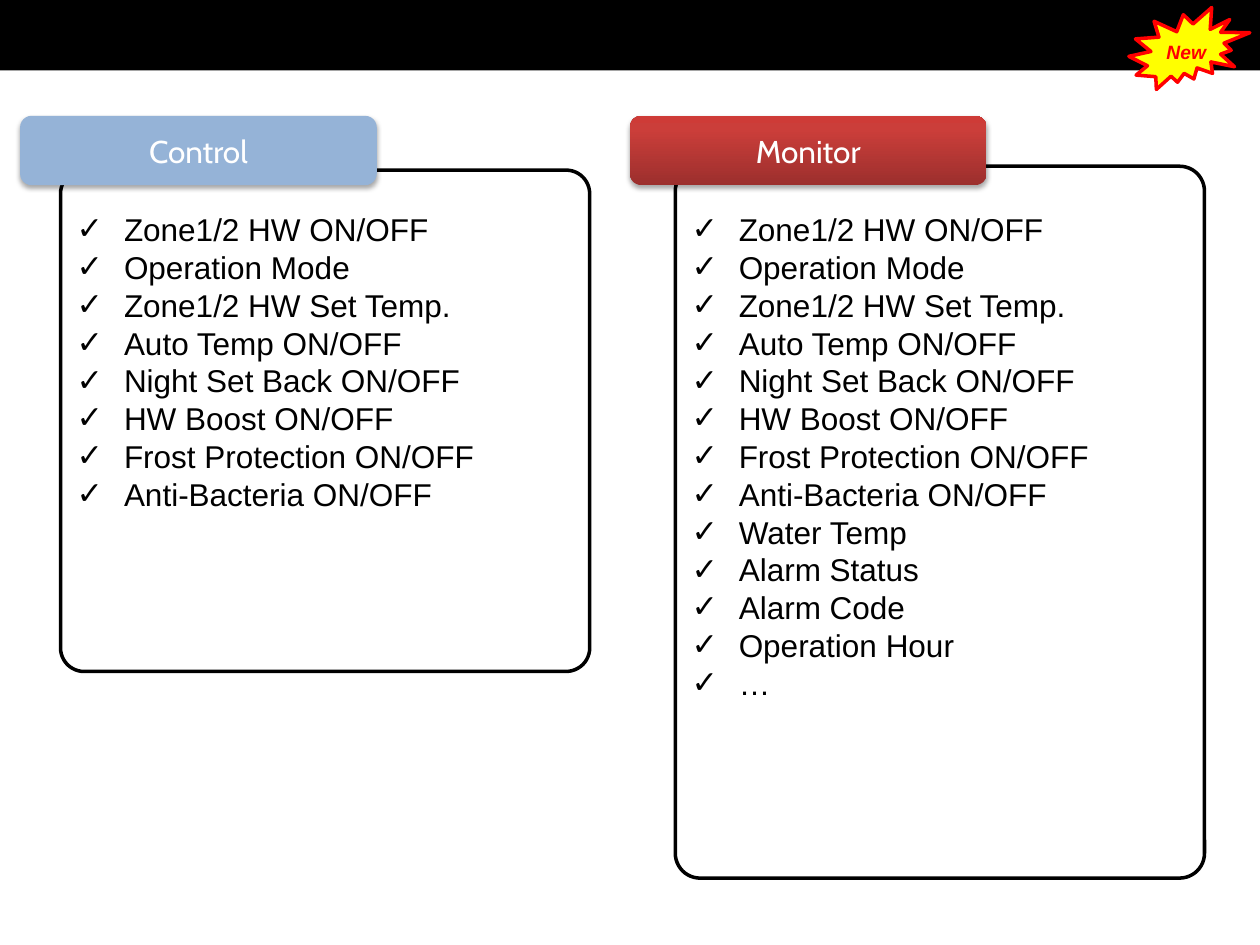
from copy import deepcopy
from dataclasses import dataclass

from lxml.etree import SubElement
from pptx import Presentation
from pptx.dml.color import RGBColor
from pptx.enum.shapes import MSO_SHAPE
from pptx.enum.text import MSO_ANCHOR, MSO_AUTO_SIZE, PP_ALIGN
from pptx.oxml.ns import qn
from pptx.shapes.autoshape import Shape
from pptx.shapes.shapetree import GroupShapes, SlideShapes
from pptx.text.text import TextFrame
from pptx.util import Pt

BLACK = RGBColor(0x00, 0x00, 0x00)
WHITE = RGBColor(0xFF, 0xFF, 0xFF)
BLUE = RGBColor(0x95, 0xB3, 0xD7)
RED = RGBColor(0xFF, 0x00, 0x00)
YELLOW = RGBColor(0xFF, 0xFF, 0x00)
MAROON = RGBColor(0x9C, 0x2F, 0x2D)
BRICK = RGBColor(0xCB, 0x3E, 0x3A)
SCARLET = RGBColor(0xCE, 0x3B, 0x37)

CONTROL = [
    "Zone1/2 HW ON/OFF",
    "Operation Mode",
    "Zone1/2 HW Set Temp.",
    "Auto Temp ON/OFF",
    "Night Set Back ON/OFF",
    "HW Boost ON/OFF",
    "Frost Protection ON/OFF",
    "Anti-Bacteria ON/OFF",
]
MONITOR = CONTROL + ["Water Temp", "Alarm Status", "Alarm Code", "Operation Hour", "…"]
INDENT = Pt(27)
PITCH = 21.6


@dataclass
class Box:
    left: float
    top: float
    width: float
    height: float

    def place(self) -> tuple[Pt, Pt, Pt, Pt]:
        return Pt(self.left), Pt(self.top), Pt(self.width), Pt(self.height)


@dataclass
class Panel:
    title: str
    tab: Box
    frame: Box
    items: list[str]
    stops: list[tuple[float, RGBColor]]


PANELS = [
    Panel("Control", Box(11.5, 66.2, 203.8, 39.6), Box(34.6, 97.2, 302.4, 286.5),
          CONTROL, [(0, BLUE)]),
    Panel("Monitor", Box(360, 66.2, 203.8, 39.6), Box(385.9, 95, 302.4, 406.8),
          MONITOR, [(0, MAROON), (0.8, BRICK), (1, SCARLET)]),
]


def add_form(shapes: SlideShapes | GroupShapes, kind: MSO_SHAPE, box: Box,
             fill: RGBColor | None = None, line: RGBColor | None = None) -> Shape:
    form = shapes.add_shape(kind, *box.place())
    form.shadow.inherit = False
    if fill is None:
        form.fill.background()
    else:
        form.fill.solid()
        form.fill.fore_color.rgb = fill
    if line is None:
        form.line.fill.background()
    else:
        form.line.color.rgb = line
        form.line.width = Pt(2)
    return form


def add_label(frame: TextFrame, text: str, face: str, size: float,
              color: RGBColor, strong: bool = False) -> None:
    para = frame.paragraphs[0]
    para.alignment = PP_ALIGN.CENTER
    add_run(para, text, face, size, color, strong)


def add_run(para, text: str, face: str, size: float,
            color: RGBColor, strong: bool = False) -> None:
    run = para.add_run()
    run.text = text
    font = run.font
    font.name = face
    font.size = Pt(size)
    font.color.rgb = color
    font.bold = font.italic = strong


def blend(form: Shape, stops: list[tuple[float, RGBColor]]) -> None:
    form.fill.gradient()
    form.fill.gradient_angle = 90
    marks = form._element.spPr.find(qn("a:gradFill")).find(qn("a:gsLst"))
    while len(marks) < len(stops):
        marks.append(deepcopy(marks[0]))
    for mark, (spot, color) in zip(form.fill.gradient_stops, stops):
        mark.position = spot
        mark.color.rgb = color


def add_shade(form: Shape) -> None:
    group = form._element.spPr.find(qn("a:effectLst"))
    shade = SubElement(group, qn("a:outerShdw"), blurRad=str(Pt(3.1)),
                       dist=str(Pt(1.8)), dir="5400000", rotWithShape="0")
    color = SubElement(shade, qn("a:srgbClr"), val=str(BLACK))
    SubElement(color, qn("a:alpha"), val="35000")


def add_list(shapes: SlideShapes, box: Box, items: list[str]) -> None:
    frame = shapes.add_textbox(*box.place()).text_frame
    frame.word_wrap = False
    frame.auto_size = MSO_AUTO_SIZE.SHAPE_TO_FIT_TEXT
    for rank, item in enumerate(items):
        para = frame.add_paragraph() if rank else frame.paragraphs[0]
        para.line_spacing = Pt(PITCH)
        props = para._p.get_or_add_pPr()
        props.set("marL", str(INDENT))
        props.set("indent", str(-INDENT))
        SubElement(props, qn("a:buFont"), typeface="Arial")
        SubElement(props, qn("a:buChar"), char="✓")
        add_run(para, item, "Arial", 18, BLACK)


def add_panel(shapes: SlideShapes, panel: Panel) -> None:
    tall = len(panel.items) * PITCH + 7.2
    add_list(shapes, Box(panel.frame.left + 2.2, 116.6, 244, tall), panel.items)
    frame = add_form(shapes, MSO_SHAPE.ROUNDED_RECTANGLE, panel.frame, line=BLACK)
    frame.adjustments[0] = 0.047
    tab = add_form(shapes, MSO_SHAPE.ROUNDED_RECTANGLE, panel.tab, panel.stops[0][1])
    if len(panel.stops) > 1:
        blend(tab, panel.stops)
    add_shade(tab)
    tab.text_frame.vertical_anchor = MSO_ANCHOR.MIDDLE
    add_label(tab.text_frame, panel.title, "Cabin", 18, WHITE)


def add_badge(shapes: SlideShapes) -> None:
    group = shapes.add_group_shape().shapes
    add_form(group, MSO_SHAPE.EXPLOSION2, Box(645.1, 4.3, 69.1, 46.8), YELLOW, RED)
    frame = group.add_textbox(*Box(659.5, 19.4, 36.7, 19.9).place()).text_frame
    frame.word_wrap = True
    frame.margin_left = frame.margin_right = 0
    add_label(frame, "New", "Arial", 11, RED, True)


def main() -> None:
    deck = Presentation()
    deck.slide_width, deck.slide_height = Pt(720), Pt(540)
    shapes = deck.slides.add_slide(deck.slide_layouts[6]).shapes
    add_form(shapes, MSO_SHAPE.RECTANGLE, Box(0, 0, 720, 40.3), BLACK)
    for panel in PANELS:
        add_panel(shapes, panel)
    add_badge(shapes)
    deck.save("out.pptx")


if __name__ == "__main__":
    main()
